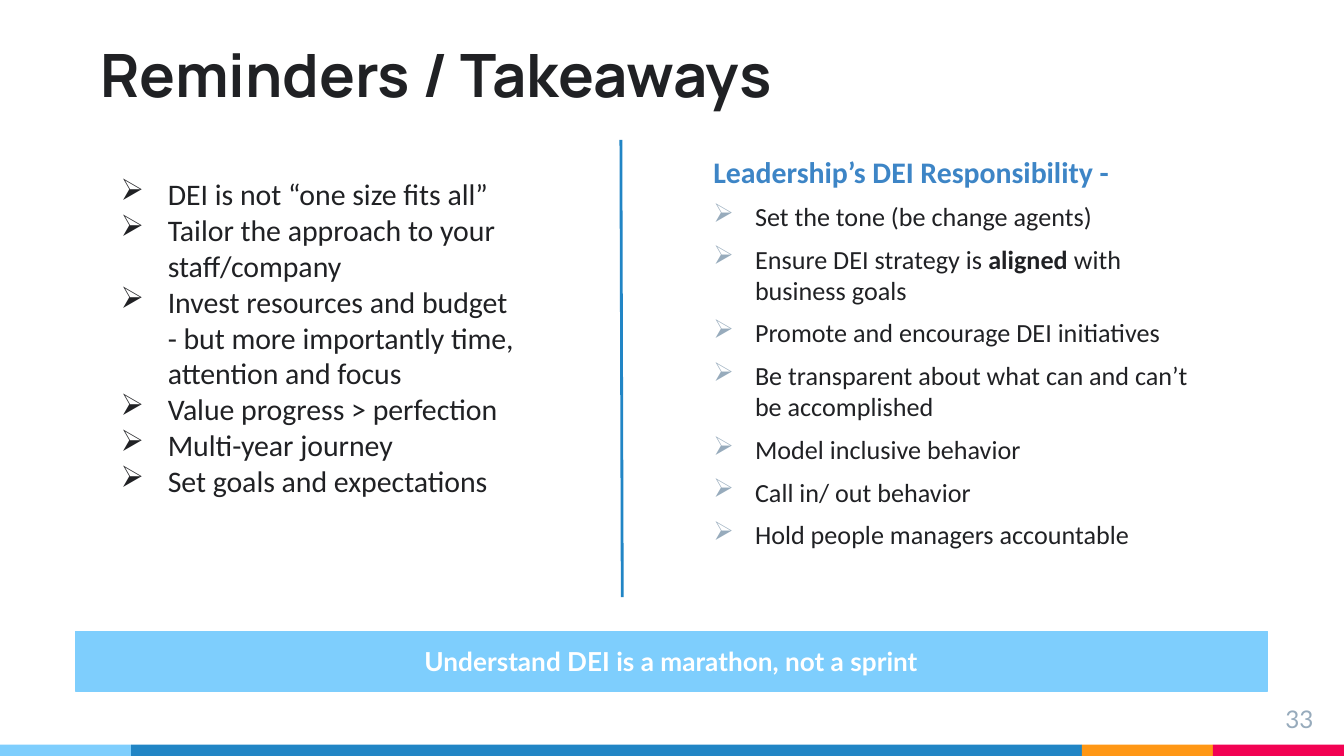
import dataclasses

import lxml.etree
import pptx
import pptx.dml.color
import pptx.enum.shapes
import pptx.enum.text
import pptx.oxml.ns
import pptx.util

SLIDE_WIDTH = pptx.util.Inches(10)
SLIDE_HEIGHT = pptx.util.Inches(5.625)

INK = "202124"
SKY = "7ECEFD"
BLUE = "2185C5"
HEADING_BLUE = "3D85C6"
GREY = "97ABBC"
ORANGE = "FF9715"
PINK = "F20253"
WHITE = "FFFFFF"

ALIGN = pptx.enum.text.PP_ALIGN
ANCHOR = pptx.enum.text.MSO_ANCHOR


@dataclasses.dataclass(frozen=True)
class Box:
    """A rectangle in percent of the slide's width and height."""

    left: float
    top: float
    width: float
    height: float

    def lengths(self) -> tuple[int, int, int, int]:
        return (across(self.left), down(self.top), across(self.width), down(self.height))


@dataclasses.dataclass(frozen=True)
class Stripe:
    width: float
    color: str


@dataclasses.dataclass(frozen=True)
class BulletStyle:
    size: float
    color: str
    margin: float
    hanging: float
    space_before: float


STRIPE_TOP = 98.5
STRIPES = [Stripe(9.75, SKY), Stripe(70.75, BLUE), Stripe(9.75, ORANGE), Stripe(9.75, PINK)]

TAKEAWAY_STYLE = BulletStyle(size=16, color=INK, margin=0.5, hanging=0.35, space_before=0)
TAKEAWAYS = [
    "DEI is not “one size fits all”",
    "Tailor the approach to your staff/company",
    "Invest resources and budget - but more importantly time, attention and focus",
    "Value progress > perfection",
    "Multi-year journey",
    "Set goals and expectations",
]

DUTY_STYLE = BulletStyle(size=14, color=GREY, margin=0.31, hanging=0.31, space_before=6)
# Words between asterisks are bold.
DUTIES = [
    "Set the tone (be change agents)",
    "Ensure DEI strategy is *aligned* with business goals",
    "Promote and encourage DEI initiatives",
    "Be transparent about what can and can’t be accomplished",
    "Model inclusive behavior",
    "Call in/ out behavior",
    "Hold people managers accountable",
]


def across(percent: float) -> int:
    return round(SLIDE_WIDTH * percent / 100)


def down(percent: float) -> int:
    return round(SLIDE_HEIGHT * percent / 100)


def rgb(color: str) -> pptx.dml.color.RGBColor:
    return pptx.dml.color.RGBColor.from_string(color)


def prepare_frame(shape, anchor=ANCHOR.TOP):
    """Set wrapping, insets and anchor, and return the text frame."""
    frame = shape.text_frame
    frame.word_wrap = True
    frame.vertical_anchor = anchor
    inset = pptx.util.Inches(0.1)
    frame.margin_left = frame.margin_right = inset
    frame.margin_top = frame.margin_bottom = inset
    return frame


def add_text_box(slide, box: Box, anchor=ANCHOR.TOP):
    return prepare_frame(slide.shapes.add_textbox(*box.lengths()), anchor)


def write(frame, text: str, *, size: float, font: str = "Calibri", color: str = INK,
          bold: bool = False, align=ALIGN.LEFT, space_before: float = 0):
    """Add a paragraph, using the empty first one if free; asterisks toggle bold."""
    first = frame.paragraphs[0]
    paragraph = frame.add_paragraph() if first.runs else first
    paragraph.alignment = align
    paragraph.space_before = pptx.util.Pt(space_before)
    for index, part in enumerate(text.split("*")):
        run = paragraph.add_run()
        run.text = part
        run.font.size = pptx.util.Pt(size)
        run.font.name = font
        run.font.bold = bold or index % 2 == 1
        run.font.color.rgb = rgb(color)
    return paragraph


def add_bullet(paragraph, style: BulletStyle) -> None:
    qn = pptx.oxml.ns.qn
    properties = paragraph._p.get_or_add_pPr()
    properties.set("marL", str(pptx.util.Inches(style.margin)))
    properties.set("indent", str(-pptx.util.Inches(style.hanging)))
    bullet_color = lxml.etree.SubElement(properties, qn("a:buClr"))
    lxml.etree.SubElement(bullet_color, qn("a:srgbClr"), val=style.color)
    lxml.etree.SubElement(properties, qn("a:buChar"), char="➢")


def write_bullets(frame, items: list[str], style: BulletStyle) -> None:
    for item in items:
        paragraph = write(frame, item, size=style.size, space_before=style.space_before)
        add_bullet(paragraph, style)


def add_rectangle(slide, box: Box, color: str):
    shape = slide.shapes.add_shape(pptx.enum.shapes.MSO_SHAPE.RECTANGLE, *box.lengths())
    shape.shadow.inherit = False
    shape.fill.solid()
    shape.fill.fore_color.rgb = rgb(color)
    shape.line.fill.background()
    return shape


def add_stripes(slide) -> None:
    left = 0.0
    for stripe in STRIPES:
        add_rectangle(slide, Box(left, STRIPE_TOP, stripe.width, 100 - STRIPE_TOP), stripe.color)
        left += stripe.width


def add_banner(slide) -> None:
    banner = add_rectangle(slide, Box(5.6, 83.5, 88.7, 7.9), SKY)
    banner.line.color.rgb = rgb(SKY)
    banner.line.width = pptx.util.Pt(0.75)
    write(prepare_frame(banner, ANCHOR.MIDDLE), "Understand DEI is a marathon, not a sprint",
          size=14, font="Lato", color=WHITE, bold=True, align=ALIGN.CENTER)


def add_divider(slide) -> None:
    divider = slide.shapes.add_connector(
        pptx.enum.shapes.MSO_CONNECTOR.STRAIGHT,
        across(46.2), down(18.5), across(46.3), down(79))
    divider.line.color.rgb = rgb(BLUE)
    divider.line.width = pptx.util.Pt(1.5)
    lxml.etree.SubElement(divider._element.spPr, pptx.oxml.ns.qn("a:effectLst"))


def main() -> None:
    presentation = pptx.Presentation()
    presentation.slide_width = SLIDE_WIDTH
    presentation.slide_height = SLIDE_HEIGHT
    slide = presentation.slides.add_slide(presentation.slide_layouts[6])

    add_stripes(slide)

    title = add_text_box(slide, Box(6.5, 4.4, 70.7, 11.8), ANCHOR.BOTTOM)
    write(title, "Reminders / Takeaways", size=32, font="Manrope", bold=True)

    takeaways = add_text_box(slide, Box(6.5, 21.5, 32.9, 57))
    write_bullets(takeaways, TAKEAWAYS, TAKEAWAY_STYLE)

    duties = add_text_box(slide, Box(52.1, 18.5, 38.3, 72.4))
    write(duties, "Leadership’s DEI Responsibility -", size=16, color=HEADING_BLUE,
          bold=True, space_before=6)
    write_bullets(duties, DUTIES, DUTY_STYLE)

    page_number = add_text_box(slide, Box(92.7, 91.4, 6, 6))
    write(page_number, "33", size=13, font="Lato", color=GREY, align=ALIGN.RIGHT)

    add_banner(slide)
    add_divider(slide)
    presentation.save("out.pptx")


if __name__ == "__main__":
    main()
